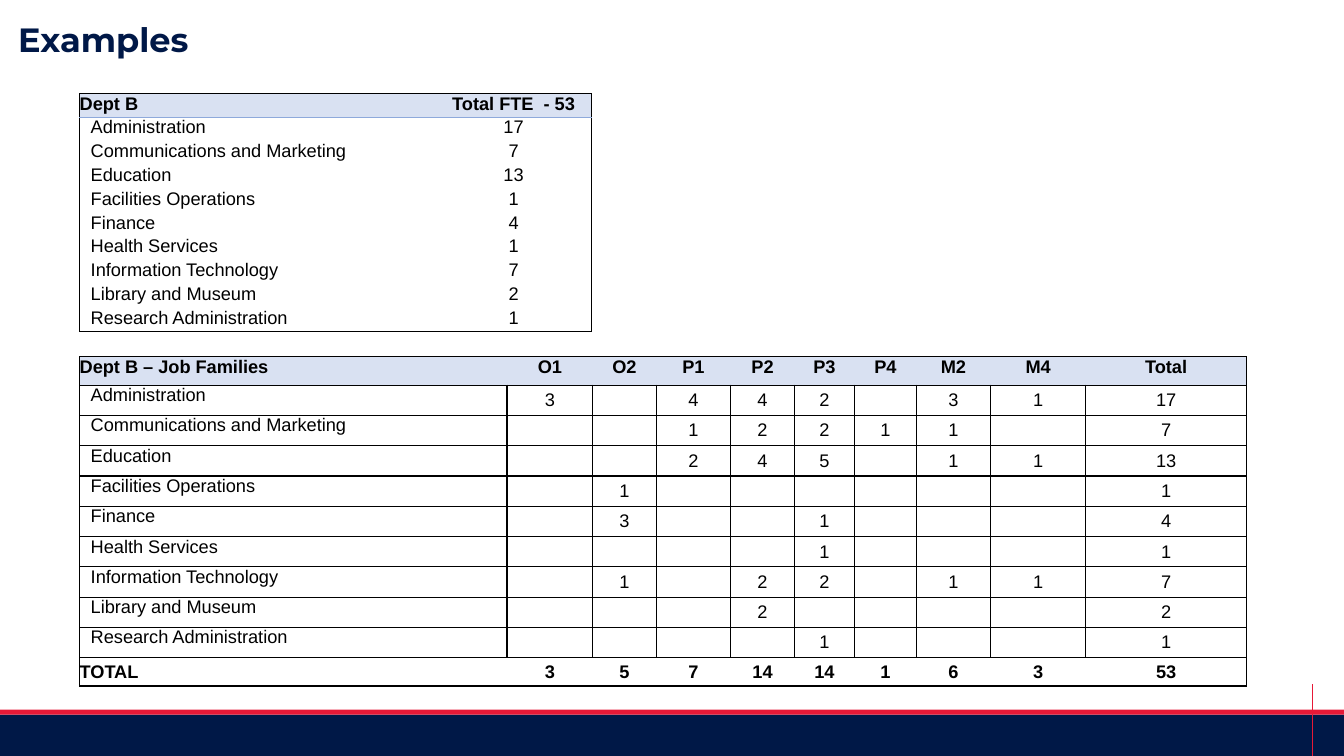
from dataclasses import dataclass
from typing import Optional

from lxml.etree import SubElement
from pptx import Presentation
from pptx.dml.color import RGBColor
from pptx.enum.shapes import MSO_CONNECTOR as Connector, MSO_SHAPE as Preset
from pptx.enum.text import MSO_ANCHOR as Anchor, MSO_AUTO_SIZE as AutoSize, PP_ALIGN as Align
from pptx.oxml.ns import qn
from pptx.util import Emu, Inches, Pt

NAVY = RGBColor(0x00, 0x18, 0x47)
RED = RGBColor(0xE6, 0x19, 0x37)
BLACK = RGBColor(0x00, 0x00, 0x00)
HEADER_FILL = RGBColor(0xD9, 0xE1, 0xF2)
HEADER_RULE = RGBColor(0x8E, 0xA9, 0xDB)

# The slide is a grid of square cells, twelve to the inch
GRID_COLUMNS, GRID_ROWS = 160, 90
CELL = Inches(1) // 12


def grid(cells: float) -> Emu:
    return Emu(round(cells * CELL))


@dataclass(frozen=True)
class Border:
    color: RGBColor = BLACK
    points: float = 1


@dataclass(frozen=True)
class Band:
    left: float
    top: float
    width: float
    height: float
    color: RGBColor


@dataclass(frozen=True)
class StaffTable:
    top: float
    widths: list[float]
    row_height: float
    rows: list[list[str]]
    header_rule: Border
    ruled: bool  # lines between the body cells, with counts set in the middle
    has_total: bool
    left: float = 9.48


# Headcount of each job family by level
LEVELS = ["O1", "O2", "P1", "P2", "P3", "P4", "M2", "M4"]
FAMILIES = {
    "Administration": [3, 0, 4, 4, 2, 0, 3, 1],
    "Communications and Marketing": [0, 0, 1, 2, 2, 1, 1, 0],
    "Education": [0, 0, 2, 4, 5, 0, 1, 1],
    "Facilities Operations": [0, 1, 0, 0, 0, 0, 0, 0],
    "Finance": [0, 3, 0, 0, 1, 0, 0, 0],
    "Health Services": [0, 0, 0, 0, 1, 0, 0, 0],
    "Information Technology": [0, 1, 0, 2, 2, 0, 1, 1],
    "Library and Museum": [0, 0, 0, 2, 0, 0, 0, 0],
    "Research Administration": [0, 0, 0, 0, 1, 0, 0, 0],
}
LEVEL_TOTALS = [sum(level) for level in zip(*FAMILIES.values())]
HEADCOUNT = sum(LEVEL_TOTALS)


def counts(values: list[int]) -> list[str]:
    return [str(value or "") for value in [*values, sum(values)]]


SUMMARY = StaffTable(
    top=11.16, widths=[42.36, 18.6], row_height=2.83,
    rows=[["Dept B", f"Total FTE  - {HEADCOUNT}"],
          *([family, str(sum(values))] for family, values in FAMILIES.items())],
    header_rule=Border(HEADER_RULE, 0.5), ruled=False, has_total=False)
BREAKDOWN = StaffTable(
    top=42.48, row_height=3.37,
    widths=[50.88, 10.2, 7.56, 8.88, 7.56, 7.2, 7.32, 8.88, 11.28, 19.2],
    rows=[["Dept B – Job Families", *LEVELS, "Total"],
          *([family, *counts(values)] for family, values in FAMILIES.items()),
          ["TOTAL", *counts(LEVEL_TOTALS)]],
    header_rule=Border(), ruled=True, has_total=True)

FOOTER_BANDS = [
    Band(0, 85.08, GRID_COLUMNS, 4.92, NAVY),
    Band(0, 84.48, GRID_COLUMNS, 0.6, RED),
]


def write(frame, text: str, *, size: float = 13, bold: bool = False,
          color: RGBColor = BLACK, font: str = "Arial", align: Align = Align.LEFT) -> None:
    paragraph = frame.paragraphs[0]
    paragraph.alignment = align
    run = paragraph.add_run()
    run.text = text
    run.font.size, run.font.bold, run.font.name = Pt(size), bold, font
    run.font.color.rgb = color


def set_borders(cell, **sides: Optional[Border]) -> None:
    properties = cell._tc.get_or_add_tcPr()
    for side in "LRTB":
        border = sides[side]
        line = SubElement(properties, qn(f"a:ln{side}"))
        if border is None:
            SubElement(line, qn("a:noFill"))
            continue
        line.set("w", str(Pt(border.points)))
        fill = SubElement(line, qn("a:solidFill"))
        SubElement(fill, qn("a:srgbClr")).set("val", str(border.color))


def add_title(slide, text: str) -> None:
    title = slide.shapes.title
    title.left, title.top = grid(0.96), grid(1.68)
    title.width, title.height = grid(22.92), grid(6)
    frame = title.text_frame
    frame.margin_left = frame.margin_right = Inches(0.1)
    frame.margin_top = frame.margin_bottom = Inches(0.05)
    frame.word_wrap, frame.auto_size = False, AutoSize.SHAPE_TO_FIT_TEXT
    frame.vertical_anchor = Anchor.TOP
    write(frame, text, size=24, bold=True, color=NAVY, font="Montserrat")


def add_band(slide, band: Band) -> None:
    strip = slide.shapes.add_shape(Preset.RECTANGLE, grid(band.left), grid(band.top),
                                   grid(band.width), grid(band.height))
    strip.shadow.inherit = False
    strip.fill.solid()
    strip.fill.fore_color.rgb = band.color
    strip.line.fill.background()


def add_footer_rule(slide, x: float, top: float) -> None:
    rule = slide.shapes.add_connector(Connector.STRAIGHT, grid(x), grid(top),
                                      grid(x), grid(GRID_ROWS))
    rule.line.color.rgb, rule.line.width = RED, Pt(0.5)
    SubElement(rule._element.spPr, qn("a:effectLst"))


def add_staff_table(slide, staff: StaffTable) -> None:
    last_row, last_column = len(staff.rows) - 1, len(staff.widths) - 1
    table = slide.shapes.add_table(
        last_row + 1, last_column + 1, grid(staff.left), grid(staff.top),
        grid(sum(staff.widths)), grid(staff.row_height * len(staff.rows))).table
    table.first_row = table.horz_banding = False
    for column, width in zip(table.columns, staff.widths):
        column.width = grid(width)
    edge = Border()
    for r, texts in enumerate(staff.rows):
        table.rows[r].height = grid(staff.row_height)
        header, total = r == 0, staff.has_total and r == last_row
        body = not (header or total)
        inner = edge if staff.ruled else None
        upright = inner if body else None
        for c, text in enumerate(texts):
            cell = table.cell(r, c)
            cell.margin_left = Inches(0.11) if body and c == 0 else 0
            cell.margin_right = cell.margin_top = cell.margin_bottom = 0
            centred = total or (staff.ruled and body and c > 0)
            cell.vertical_anchor = Anchor.MIDDLE if centred else Anchor.TOP
            set_borders(
                cell,
                L=edge if c == 0 else upright,
                R=edge if c == last_column else upright,
                T=edge if header else staff.header_rule if r == 1 else inner,
                B=staff.header_rule if header else edge if r == last_row else inner)
            if header:
                cell.fill.solid()
                cell.fill.fore_color.rgb = HEADER_FILL
            else:
                cell.fill.background()
            write(cell.text_frame, text, bold=not body,
                  align=Align.CENTER if c else Align.LEFT)


def main() -> None:
    deck = Presentation()
    deck.slide_width, deck.slide_height = grid(GRID_COLUMNS), grid(GRID_ROWS)
    slide = deck.slides.add_slide(deck.slide_layouts[5])
    # Footer
    for band in FOOTER_BANDS:
        add_band(slide, band)
    add_footer_rule(slide, x=156.24, top=81.48)
    # Title and tables
    add_title(slide, "Examples")
    for staff in (SUMMARY, BREAKDOWN):
        add_staff_table(slide, staff)
    deck.save("out.pptx")


if __name__ == "__main__":
    main()
